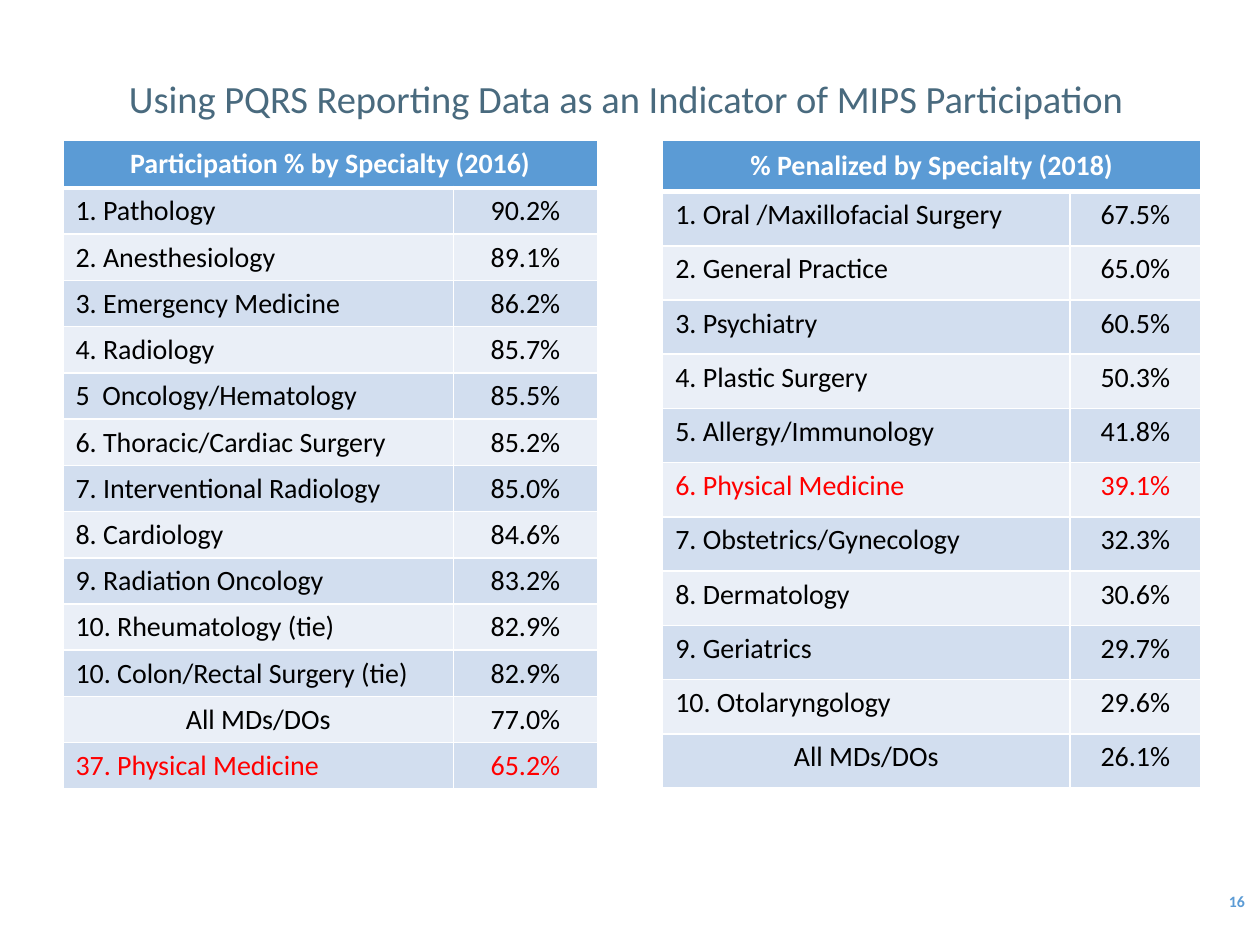
from dataclasses import dataclass

from lxml.etree import SubElement
from pptx import Presentation
from pptx.dml.color import RGBColor
from pptx.enum.text import MSO_ANCHOR, PP_ALIGN
from pptx.oxml.ns import qn
from pptx.util import Pt


@dataclass(frozen=True)
class Theme:
    font: str = "Calibri"
    title: str = "496A7E"
    accent: str = "5B9BD5"
    bands: tuple = ("D2DEEF", "EAEFF7")
    white: str = "FFFFFF"
    body: str = "000000"
    highlight: str = "FF0000"
    title_size: float = 22
    table_size: float = 16
    number_size: float = 9
    rule: float = 1
    header_rule: float = 3


class SlideBuilder:
    def __init__(self, slide, theme):
        self.slide = slide
        self.theme = theme

    def add_words(self, frame, words, size, color, bold=False, align=PP_ALIGN.LEFT):
        line = frame.paragraphs[0]
        line.alignment = align
        run = line.add_run()
        run.text = words
        font_format = {"name": self.theme.font, "size": Pt(size), "bold": bold}
        for attribute, value in font_format.items():
            setattr(run.font, attribute, value)
        run.font.color.rgb = RGBColor.from_string(color)

    def text(self, box, words, size, color, inset_left=7.2, **style):
        frame = self.slide.shapes.add_textbox(*map(Pt, box)).text_frame
        frame_format = {
            "word_wrap": True,
            "vertical_anchor": MSO_ANCHOR.MIDDLE,
            "margin_left": Pt(inset_left),
        }
        for attribute, value in frame_format.items():
            setattr(frame, attribute, value)
        self.add_words(frame, words, size, color, **style)

    def paint_cell(self, cell, fill, top, bottom):
        # Borders come before the fill in the cell properties
        properties = cell._tc.get_or_add_tcPr()
        widths = {"lnL": self.theme.rule, "lnR": self.theme.rule,
                  "lnT": top, "lnB": bottom}
        for side, width in widths.items():
            border = SubElement(properties, qn(f"a:{side}"), w=str(Pt(width)))
            paint = SubElement(border, qn("a:solidFill"))
            SubElement(paint, qn("a:srgbClr"), val=self.theme.white)
        cell.fill.solid()
        cell.fill.fore_color.rgb = RGBColor.from_string(fill)

    def ranking(self, left, top, widths, header_height, row_height,
                heading, entries, highlighted):
        theme = self.theme
        height = header_height + row_height * len(entries)
        table = self.slide.shapes.add_table(
            len(entries) + 1, 2, Pt(left), Pt(top), Pt(sum(widths)), Pt(height)
        ).table
        for column, width in zip(table.columns, widths):
            column.width = Pt(width)
        for row in table.rows:
            row.height = Pt(row_height)
        table.rows[0].height = Pt(header_height)

        # Heading across both columns
        header = table.cell(0, 0)
        for column in range(2):
            self.paint_cell(table.cell(0, column), theme.accent,
                            theme.rule, theme.header_rule)
        header.merge(table.cell(0, 1))
        header.vertical_anchor = MSO_ANCHOR.MIDDLE
        self.add_words(header.text_frame, heading, theme.table_size, theme.white,
                       bold=True, align=PP_ALIGN.CENTER)

        # Banded entries; unranked labels are centred
        for index, (specialty, share) in enumerate(entries):
            color = theme.highlight if specialty == highlighted else theme.body
            ranked = specialty[0].isdigit()
            aligns = (PP_ALIGN.LEFT if ranked else PP_ALIGN.CENTER, PP_ALIGN.CENTER)
            rule_above = theme.rule if index else theme.header_rule
            for column, words in enumerate((specialty, f"{share:.1f}%")):
                cell = table.cell(index + 1, column)
                self.paint_cell(cell, theme.bands[index % 2], rule_above, theme.rule)
                self.add_words(cell.text_frame, words, theme.table_size, color,
                               align=aligns[column])


PARTICIPATION = [
    ("1. Pathology", 90.2),
    ("2. Anesthesiology", 89.1),
    ("3. Emergency Medicine", 86.2),
    ("4. Radiology", 85.7),
    ("5  Oncology/Hematology", 85.5),
    ("6. Thoracic/Cardiac Surgery", 85.2),
    ("7. Interventional Radiology", 85.0),
    ("8. Cardiology", 84.6),
    ("9. Radiation Oncology", 83.2),
    ("10. Rheumatology (tie)", 82.9),
    ("10. Colon/Rectal Surgery (tie)", 82.9),
    ("All MDs/DOs", 77.0),
    ("37. Physical Medicine", 65.2),
]
PENALIZED = [
    ("1. Oral /Maxillofacial Surgery", 67.5),
    ("2. General Practice", 65.0),
    ("3. Psychiatry", 60.5),
    ("4. Plastic Surgery", 50.3),
    ("5. Allergy/Immunology", 41.8),
    ("6. Physical Medicine", 39.1),
    ("7. Obstetrics/Gynecology", 32.3),
    ("8. Dermatology", 30.6),
    ("9. Geriatrics", 29.7),
    ("10. Otolaryngology", 29.6),
    ("All MDs/DOs", 26.1),
]


def main():
    presentation = Presentation()
    presentation.slide_width, presentation.slide_height = Pt(720), Pt(540)
    theme = Theme()
    builder = SlideBuilder(
        presentation.slides.add_slide(presentation.slide_layouts[6]), theme)

    # Slide number and title
    builder.text((627.8, 500.4, 90.7, 28.8), "16", theme.number_size,
                 theme.accent, bold=True, align=PP_ALIGN.RIGHT)
    builder.text((36, 39.6, 650.9, 33.1),
                 "Using PQRS Reporting Data as an Indicator of MIPS Participation",
                 theme.title_size, theme.title, inset_left=0,
                 align=PP_ALIGN.CENTER)

    # Rankings side by side
    tables_top = 80
    builder.ranking(36, tables_top, (223.2, 82.1), 27.4, 26.3,
                    "Participation % by Specialty (2016)",
                    PARTICIPATION, "37. Physical Medicine")
    builder.ranking(378.7, tables_top, (232.6, 74.9), 29.5, 31,
                    "% Penalized by Specialty (2018)",
                    PENALIZED, "6. Physical Medicine")

    presentation.save("out.pptx")


if __name__ == "__main__":
    main()
